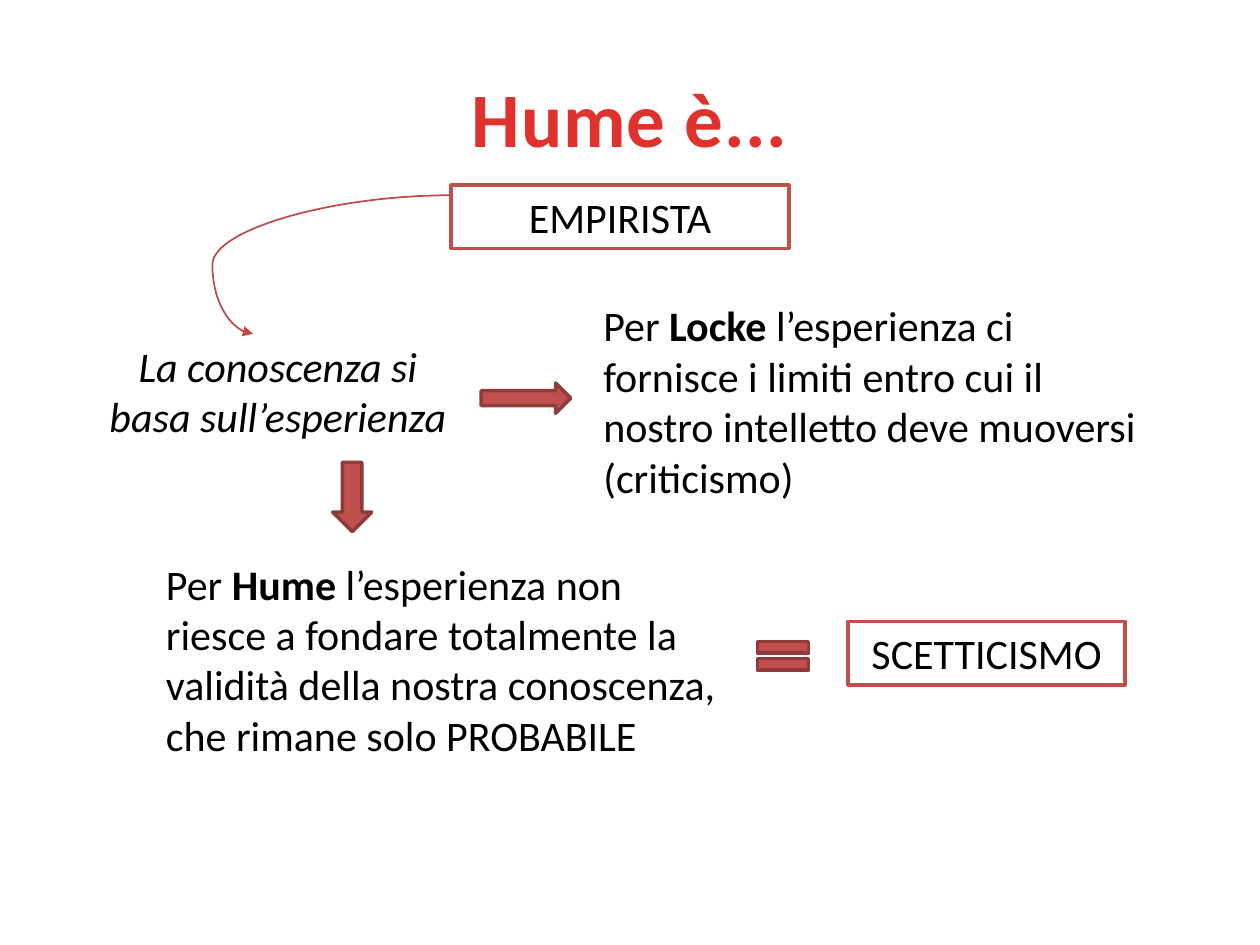
from lxml import etree
from pptx import Presentation
from pptx.dml.color import RGBColor
from pptx.enum.shapes import MSO_CONNECTOR, MSO_SHAPE
from pptx.enum.text import MSO_ANCHOR, MSO_AUTO_SIZE, PP_ALIGN
from pptx.oxml.ns import qn
from pptx.util import Pt

CURVE = MSO_CONNECTOR.CURVE
RECT = MSO_SHAPE.RECTANGLE
RIGHT, DOWN = MSO_SHAPE.RIGHT_ARROW, MSO_SHAPE.DOWN_ARROW
EQUAL = MSO_SHAPE.MATH_EQUAL
MIDDLE = MSO_ANCHOR.MIDDLE
GROW = MSO_AUTO_SIZE.SHAPE_TO_FIT_TEXT
LEFT, CENTER = PP_ALIGN.LEFT, PP_ALIGN.CENTER

FONT = "Calibri"
BLACK, WHITE = "000000", "FFFFFF"
RED, EDGE, CURVED = "C0504D", "8E3B39", "BF4C48"


def color(code):
    return RGBColor.from_string(code)


def place(box):
    return [Pt(n) for n in box]


def write(frame, runs, align):
    """Fill a frame with (text, style) runs; style is "", "b" or "i"."""
    frame.word_wrap = True
    frame.auto_size = GROW
    para = frame.paragraphs[0]
    para.alignment = align
    for text, style in runs:
        run = para.add_run()
        run.text = text
        font = run.font
        font.name, font.size = FONT, Pt(24)
        font.bold, font.italic = style == "b", style == "i"
        font.color.rgb = color(BLACK)


def add_title(slide, text, box):
    title = slide.shapes.title
    title.left, title.top, title.width, title.height = place(box)
    frame = title.text_frame
    frame.vertical_anchor = MIDDLE
    para = frame.paragraphs[0]
    para.alignment = CENTER
    run = para.add_run()
    run.text = text
    font = run.font
    font.name, font.size, font.bold = FONT, Pt(44), True
    font.fill.gradient()
    font.fill.gradient_angle = 270
    stops = ((0.25, "E0322D"), (1, "A2201C"))
    for stop, (pos, code) in zip(font.fill.gradient_stops, stops):
        stop.position = pos
        stop.color.rgb = color(code)
    run._r.get_or_add_rPr().set("spc", "50")


def add_text(slide, box, runs, align=LEFT):
    write(slide.shapes.add_textbox(*place(box)).text_frame, runs, align)


def add_shape(slide, kind, box, fill, line):
    shape = slide.shapes.add_shape(kind, *place(box))
    shape.shadow.inherit = False
    shape.fill.solid()
    shape.fill.fore_color.rgb = color(fill)
    shape.line.color.rgb = color(line)
    shape.line.width = Pt(2)
    return shape


def add_label(slide, box, text):
    shape = add_shape(slide, RECT, box, WHITE, RED)
    write(shape.text_frame, [(text, "")], CENTER)


def add_curve(slide, start, end, bend):
    """Draw a curved arrow; bend is its turning point in 1/100000 of the width."""
    curve = slide.shapes.add_connector(CURVE, *place(start + end))
    curve.line.color.rgb = color(CURVED)
    curve.line.width = Pt(1)
    props = curve._element.spPr
    guides = props.find(qn("a:prstGeom")).find(qn("a:avLst"))
    etree.SubElement(guides, qn("a:gd"), name="adj1", fmla=f"val {bend}")
    etree.SubElement(props.find(qn("a:ln")), qn("a:tailEnd"), type="triangle")
    etree.SubElement(props, qn("a:effectLst"))


def main():
    deck = Presentation()
    deck.slide_width, deck.slide_height = Pt(720), Pt(540)
    slide = deck.slides.add_slide(deck.slide_layouts[5])

    add_title(slide, "Hume è...", (36, 21.6, 648, 90))
    add_label(slide, (257.8, 105.8, 193, 36.3), "EMPIRISTA")
    add_text(slide, (54, 190.8, 209.5, 65.4),
             [("La conoscenza si basa sull’esperienza", "i")], CENTER)
    add_text(slide, (337.7, 167.8, 329, 123.6),
             [("Per ", ""), ("Locke", "b"),
              (" l’esperienza ci fornisce i limiti entro cui il nostro "
               "intelletto deve muoversi (criticismo)", "")])
    add_text(slide, (87.8, 315.4, 329, 123.6),
             [("Per ", ""), ("Hume", "b"),
              (" l’esperienza non riesce a fondare totalmente la validità "
               "della nostra conoscenza, che rimane solo PROBABILE", "")])
    add_label(slide, (484.6, 355, 158.4, 36.3), "SCETTICISMO")

    add_curve(slide, (257.8, 111.6), (144.7, 190.8), 120600)
    signs = (
        (RIGHT, (275, 218.9, 51.1, 17.3)),
        (DOWN, (190.1, 264.2, 22.3, 39.6)),
        (EQUAL, (427.7, 360.7, 39.6, 28.1)),
    )
    for kind, box in signs:
        add_shape(slide, kind, box, RED, EDGE)

    deck.save("out.pptx")


if __name__ == "__main__":
    main()
